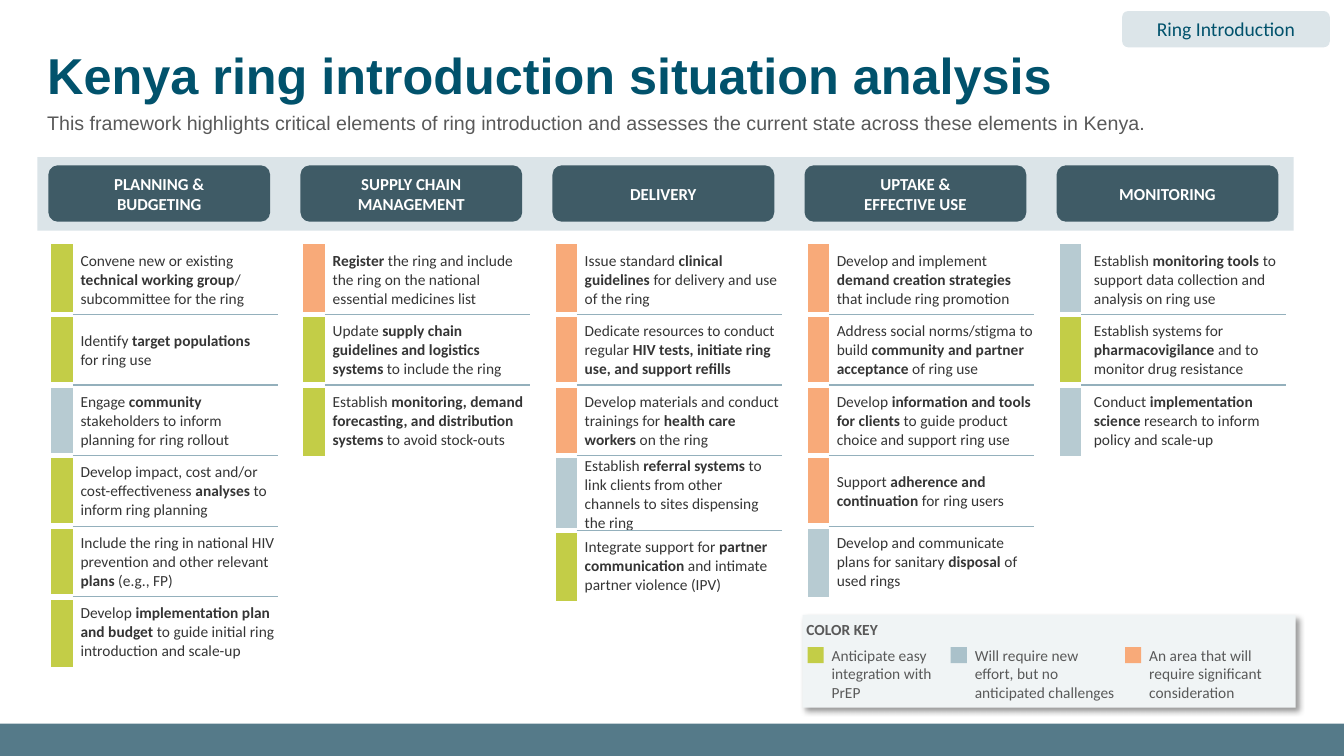
from lxml import etree
from pptx import Presentation
from pptx.dml.color import RGBColor
from pptx.enum.shapes import MSO_SHAPE
from pptx.enum.text import MSO_ANCHOR, PP_ALIGN
from pptx.oxml.ns import qn
from pptx.util import Inches, Pt

RECTANGLE = MSO_SHAPE.RECTANGLE
ROUNDED = MSO_SHAPE.ROUNDED_RECTANGLE
TOP, MIDDLE, BOTTOM = MSO_ANCHOR.TOP, MSO_ANCHOR.MIDDLE, MSO_ANCHOR.BOTTOM
LEFT, CENTER = PP_ALIGN.LEFT, PP_ALIGN.CENTER

TEAL, GRAY, INK, WHITE = "01526C", "595959", "353535", "FFFFFF"
PALE, SLATE, RULE = "DBE4E8", "3F5B66", "94B0BC"
EASY, EFFORT, MAJOR = "C3CD47", "B7CBD2", "F8AA79"
FIRST_COLUMN, COLUMN_STEP = 0.48, 2.5
BAR_WIDTH, TEXT_WIDTH, ROW_HEIGHT = 0.15, 2.01, 0.7

PILLARS = [
    ("PLANNING &\nBUDGETING", 0.05, [
        (EASY, "Convene new or existing *technical working group*/ subcommittee for the ring"),
        (EASY, "Identify *target populations*\nfor ring use"),
        (EFFORT, "Engage *community* stakeholders to inform planning for ring rollout"),
        (EASY, "Develop impact, cost and/or cost-effectiveness *analyses* to inform ring planning"),
        (EASY, "Include the ring in national HIV prevention and other relevant *plans* (e.g., FP)"),
        (EASY, "Develop *implementation plan and budget* to guide initial ring introduction and scale-up"),
    ]),
    ("SUPPLY CHAIN MANAGEMENT", 0.05, [
        (MAJOR, "*Register* the ring and include the ring on the national essential medicines list"),
        (EASY, "Update *supply chain guidelines and logistics systems* to include the ring"),
        (EASY, "Establish *monitoring, demand forecasting, and distribution systems* to avoid stock-outs"),
    ]),
    ("DELIVERY", 0.05, [
        (MAJOR, "Issue standard *clinical guidelines* for delivery and use of the ring"),
        (MAJOR, "Dedicate resources to conduct regular *HIV tests, initiate ring use, and support refills*"),
        (MAJOR, "Develop materials and conduct trainings for *health care workers* on the ring"),
        (EFFORT, "Establish *referral systems* to link clients from other channels to sites dispensing the ring"),
        (EASY, "Integrate support for *partner communication* and intimate partner violence (IPV)"),
    ]),
    ("UPTAKE &\nEFFECTIVE USE", 0.05, [
        (MAJOR, "Develop and implement *demand creation strategies* that include ring promotion"),
        (MAJOR, "Address social norms/stigma to build *community and partner acceptance* of ring use"),
        (MAJOR, "Develop *information and tools for clients* to guide product choice and support ring use"),
        (MAJOR, "Support *adherence and continuation* for ring users"),
        (EFFORT, "Develop and communicate plans for sanitary *disposal* of used rings"),
    ]),
    ("MONITORING", 0.1, [
        (EFFORT, "Establish *monitoring tools* to support data collection and analysis on ring use"),
        (EASY, "Establish systems for *pharmacovigilance* and to monitor drug resistance"),
        (EFFORT, "Conduct *implementation science* research to inform policy and scale-up"),
    ]),
]

KEY_ENTRIES = [
    (8.01, 1.29, EASY, "Anticipate easy integration with PrEP"),
    (9.43, 1.61, "AAC1CA", "Will require new effort, but no anticipated challenges"),
    (11.16, 1.77, MAJOR, "An area that will\nrequire significant consideration"),
]


def color(value):
    return RGBColor.from_string(value)


def write(frame, text, size, font_color, font="Calibri", align=LEFT):
    """Lines become paragraphs and text between asterisks is bold."""
    for number, line in enumerate(text.split("\n")):
        para = frame.add_paragraph() if number else frame.paragraphs[0]
        para.alignment = align
        for position, piece in enumerate(line.split("*")):
            if piece:
                span = para.add_run()
                span.text = piece
                span.font.name = font
                span.font.size = Pt(size)
                span.font.bold = position % 2 == 1
                span.font.color.rgb = color(font_color)


def add_box(shapes, kind, place, fill):
    box = shapes.add_shape(kind, *map(Inches, place))
    box.shadow.inherit = False
    box.fill.solid()
    box.fill.fore_color.rgb = color(fill)
    box.line.fill.background()
    return box


def add_label(shapes, place, fill, text, size, font_color):
    label = add_box(shapes, ROUNDED, place, fill)
    label.text_frame.word_wrap = True
    label.text_frame.vertical_anchor = MIDDLE
    write(label.text_frame, text, size, font_color, align=CENTER)


def add_text(shapes, place, text, size, font_color, font="Calibri", anchor=TOP):
    box = shapes.add_textbox(*map(Inches, place))
    frame = box.text_frame
    frame.word_wrap = True
    frame.vertical_anchor = anchor
    write(frame, text, size, font_color, font)
    return frame


def set_borders(cell, borders):
    properties = cell._tc.get_or_add_tcPr()
    for index, side in enumerate("LRTB"):
        line = etree.Element(qn(f"a:ln{side}"))
        if side in borders:
            line_color, width = borders[side]
            line.set("w", str(Pt(width)))
            solid = etree.SubElement(line, qn("a:solidFill"))
            etree.SubElement(solid, qn("a:srgbClr"), val=line_color)
        else:
            etree.SubElement(line, qn("a:noFill"))
        properties.insert(index, line)


def add_items(shapes, left, inset, items):
    frame = shapes.add_table(
        len(items), 2, Inches(left), Inches(2.42),
        Inches(BAR_WIDTH + TEXT_WIDTH), Inches(ROW_HEIGHT * len(items)))
    table = frame.table
    table.first_row = table.horz_banding = False
    table.columns[0].width = Inches(BAR_WIDTH)
    table.columns[1].width = Inches(TEXT_WIDTH)
    gap, rule = (WHITE, 4.5), (RULE, 1)
    for row, (status, text) in enumerate(items):
        table.rows[row].height = Inches(ROW_HEIGHT)
        bar, cell = table.cell(row, 0), table.cell(row, 1)
        bar.fill.solid()
        bar.fill.fore_color.rgb = color(status)
        cell.fill.background()
        bar_borders, cell_borders = {"R": gap}, {"L": gap}
        if row > 0:
            bar_borders["T"], cell_borders["T"] = gap, rule
        if row < len(items) - 1:
            bar_borders["B"], cell_borders["B"] = gap, rule
        set_borders(bar, bar_borders)
        set_borders(cell, cell_borders)
        cell.margin_left = Inches(inset)
        cell.margin_top = cell.margin_right = Inches(0.01)
        cell.margin_bottom = 0
        cell.vertical_anchor = MIDDLE
        write(cell.text_frame, text, 11, INK)


def add_shadow(box):
    effects = box._element.spPr.find(qn("a:effectLst"))
    shadow = etree.SubElement(
        effects, qn("a:outerShdw"), blurRad=str(Pt(4)), dist=str(Pt(3)),
        dir=str(45 * 60000), algn="tl", rotWithShape="0")
    tint = etree.SubElement(shadow, qn("a:srgbClr"), val="000000")
    etree.SubElement(tint, qn("a:alpha"), val="40000")


def add_color_key(page):
    shapes = page.shapes.add_group_shape().shapes
    add_shadow(add_box(shapes, RECTANGLE, (7.96, 6.1, 4.89, 0.92), "F0F4F5"))
    add_text(shapes, (7.9, 6.1, 2.9, 0.29), "*COLOR KEY*", 11, GRAY)
    for left, width, fill, text in KEY_ENTRIES:
        add_box(shapes, RECTANGLE, (left, 6.42, 0.16, 0.16), fill)
        add_text(shapes, (left + 0.14, 6.36, width, 0.66), text, 11, GRAY)


def main():
    deck = Presentation()
    deck.slide_width, deck.slide_height = Inches(13.33), Inches(7.5)
    page = deck.slides.add_slide(deck.slide_layouts[6])
    shapes = page.shapes
    add_box(shapes, RECTANGLE, (0, 7.18, 13.33, 0.32), "557A89")
    add_box(shapes, RECTANGLE, (0.37, 1.56, 12.46, 0.73), PALE)
    title = add_text(shapes, (0.37, 0.23, 12.46, 0.87),
                     "*Kenya ring introduction situation analysis*", 36, TEAL, "Arial", BOTTOM)
    title.paragraphs[0].line_spacing = 0.9
    add_text(shapes, (0.37, 0.96, 12.46, 0.51),
             "This framework highlights critical elements of ring introduction and "
             "assesses the current state across these elements in Kenya.",
             14, GRAY, "Arial", MIDDLE)
    add_label(shapes, (11.13, 0.11, 2.06, 0.36), "DCE5E9", "Ring Introduction", 14, TEAL)
    add_color_key(page)
    for number, (heading, inset, items) in enumerate(PILLARS):
        left = FIRST_COLUMN + number * COLUMN_STEP
        bold_heading = "\n".join(f"*{line}*" for line in heading.split("\n"))
        add_label(shapes, (left, 1.64, 2.2, 0.56), SLATE, bold_heading, 12, WHITE)
        add_items(shapes, left + 0.03, inset, items)
    deck.save("out.pptx")


if __name__ == "__main__":
    main()
